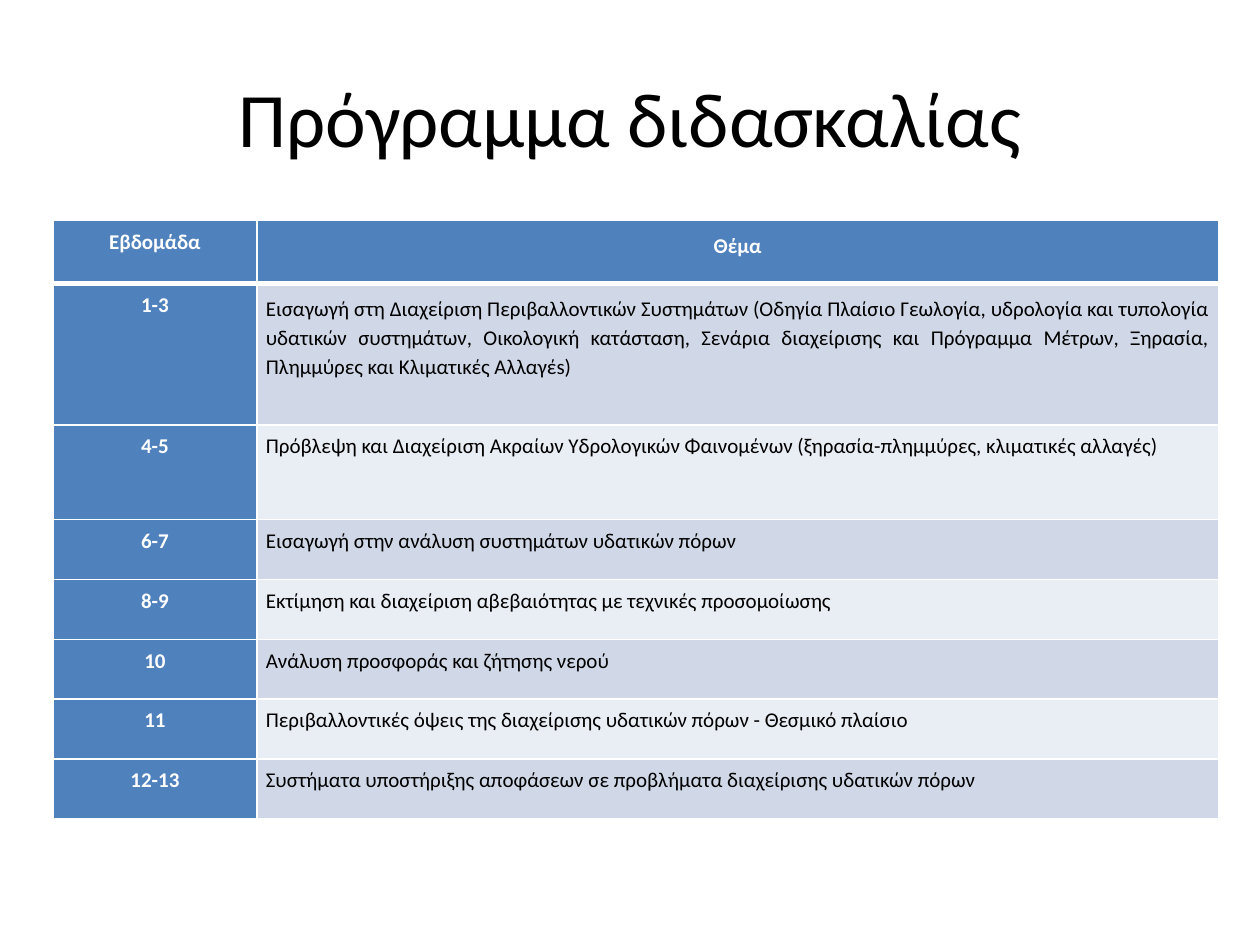
"""Build the slide with the weekly teaching programme."""
from dataclasses import dataclass
from typing import Any, NamedTuple

from lxml.etree import SubElement
from pptx import Presentation
from pptx.dml.color import RGBColor
from pptx.enum.text import MSO_ANCHOR, PP_ALIGN
from pptx.oxml.ns import qn
from pptx.util import Inches, Pt


@dataclass(frozen=True)
class Theme:
    font: str = "Calibri"
    ink: str = "000000"
    white: str = "FFFFFF"
    blue: str = "4F81BD"
    bands: tuple[str, str] = ("D0D8E8", "E9EDF4")
    title: int = 44
    body: int = 12
    thin: int = 1
    thick: int = 3


class Topic(NamedTuple):
    weeks: str
    text: str
    rows: float = 9.5
    align: Any = PP_ALIGN.LEFT
    space: float = 1.0


class Look(NamedTuple):
    size: int
    color: str
    bold: bool = False
    align: Any = PP_ALIGN.CENTER
    space: float = 1.0


THEME = Theme()
WIDE, HIGH = Inches(10), Inches(7.5)
COLS, ROWS = 200, 150
SPLIT = (32.4, 152.6)
HEAD = Topic("Εβδομάδα", "Θέμα", 10, PP_ALIGN.CENTER, 1.15)
TOPICS = [
    Topic(
        "1-3",
        "Εισαγωγή στη Διαχείριση Περιβαλλοντικών Συστημάτων (Οδηγία Πλαίσιο "
        "Γεωλογία, υδρολογία και τυπολογία υδατικών συστημάτων, Οικολογική "
        "κατάσταση, Σενάρια διαχείρισης και Πρόγραμμα Μέτρων, Ξηρασία, "
        "Πλημμύρες και Κλιματικές Αλλαγέs)",
        22.5, PP_ALIGN.JUSTIFY, 1.15,
    ),
    Topic(
        "4-5",
        "Πρόβλεψη και Διαχείριση Ακραίων Υδρολογικών Φαινομένων "
        "(ξηρασία-πλημμύρες, κλιματικές αλλαγές)",
        15,
    ),
    Topic("6-7", "Εισαγωγή στην ανάλυση συστημάτων υδατικών πόρων"),
    Topic("8-9", "Εκτίμηση και διαχείριση αβεβαιότητας με τεχνικές προσομοίωσης"),
    Topic("10", "Ανάλυση προσφοράς και ζήτησης νερoύ"),
    Topic("11", "Περιβαλλοντικές όψεις της διαχείρισης υδατικών πόρων - Θεσμικό πλαίσιο"),
    Topic("12-13", "Συστήματα υποστήριξης αποφάσεων σε προβλήματα διαχείρισης υδατικών πόρων"),
]


def across(cols: float) -> int:
    """Turn grid columns into a length."""
    return round(WIDE * cols / COLS)


def down(rows: float) -> int:
    """Turn grid rows into a length."""
    return round(HIGH * rows / ROWS)


def apply(item: Any, values: dict[str, Any]) -> None:
    """Set each named value on the item."""
    for name, value in values.items():
        setattr(item, name, value)


def write(frame: Any, text: str, look: Look) -> None:
    """Put one styled paragraph into a text frame."""
    para = frame.paragraphs[0]
    apply(para, {"alignment": look.align, "line_spacing": look.space})
    run = para.add_run()
    run.text = text
    apply(run.font, {"name": THEME.font, "size": Pt(look.size), "bold": look.bold})
    run.font.color.rgb = RGBColor.from_string(look.color)


def edge(cell: Any, top: int, base: int) -> None:
    """Draw white borders on the four sides of a cell."""
    props = cell._tc.get_or_add_tcPr()
    sides = {"lnL": THEME.thin, "lnR": THEME.thin, "lnT": top, "lnB": base}
    for side, width in sides.items():
        line = SubElement(props, qn(f"a:{side}"), w=str(Pt(width)))
        fill = SubElement(line, qn("a:solidFill"))
        SubElement(fill, qn("a:srgbClr"), val=THEME.white)


def paint(cell: Any, text: str, fill: str, look: Look, row: int) -> None:
    """Fill, border and write one cell."""
    sides = ("left", "right", "top", "bottom")
    apply(cell, {f"margin_{side}": Inches(0.07) for side in sides})
    edge(cell, THEME.thick if row == 1 else THEME.thin,
         THEME.thick if row == 0 else THEME.thin)
    cell.fill.solid()
    cell.fill.fore_color.rgb = RGBColor.from_string(fill)
    write(cell.text_frame, text, look)


def plan(slide: Any, topics: list[Topic]) -> None:
    """Draw the table of weeks and topics."""
    items = [HEAD, *topics]
    total = sum(item.rows for item in items)
    table = slide.shapes.add_table(
        len(items), len(SPLIT), across(8.4), down(35), across(sum(SPLIT)), down(total)
    ).table
    for col, cols in zip(table.columns, SPLIT):
        col.width = across(cols)
    label = Look(THEME.body, THEME.white, True)
    for row, item in enumerate(items):
        table.rows[row].height = down(item.rows)
        paint(table.cell(row, 0), item.weeks, THEME.blue, label, row)
        fill = THEME.bands[(row - 1) % 2] if row else THEME.blue
        color = THEME.ink if row else THEME.white
        look = Look(THEME.body, color, row == 0, item.align, item.space)
        paint(table.cell(row, 1), item.text, fill, look, row)


def title(slide: Any, text: str) -> None:
    """Draw the slide title."""
    box = slide.shapes.add_textbox(across(10), down(6), across(180), down(25))
    apply(box.text_frame, {"word_wrap": True, "vertical_anchor": MSO_ANCHOR.MIDDLE})
    write(box.text_frame, text, Look(THEME.title, THEME.ink))


def main() -> None:
    """Build and save the slide."""
    deck = Presentation()
    apply(deck, {"slide_width": WIDE, "slide_height": HIGH})
    slide = deck.slides.add_slide(deck.slide_layouts[6])
    title(slide, "Πρόγραμμα διδασκαλίας")
    plan(slide, TOPICS)
    deck.save("out.pptx")


if __name__ == "__main__":
    main()
